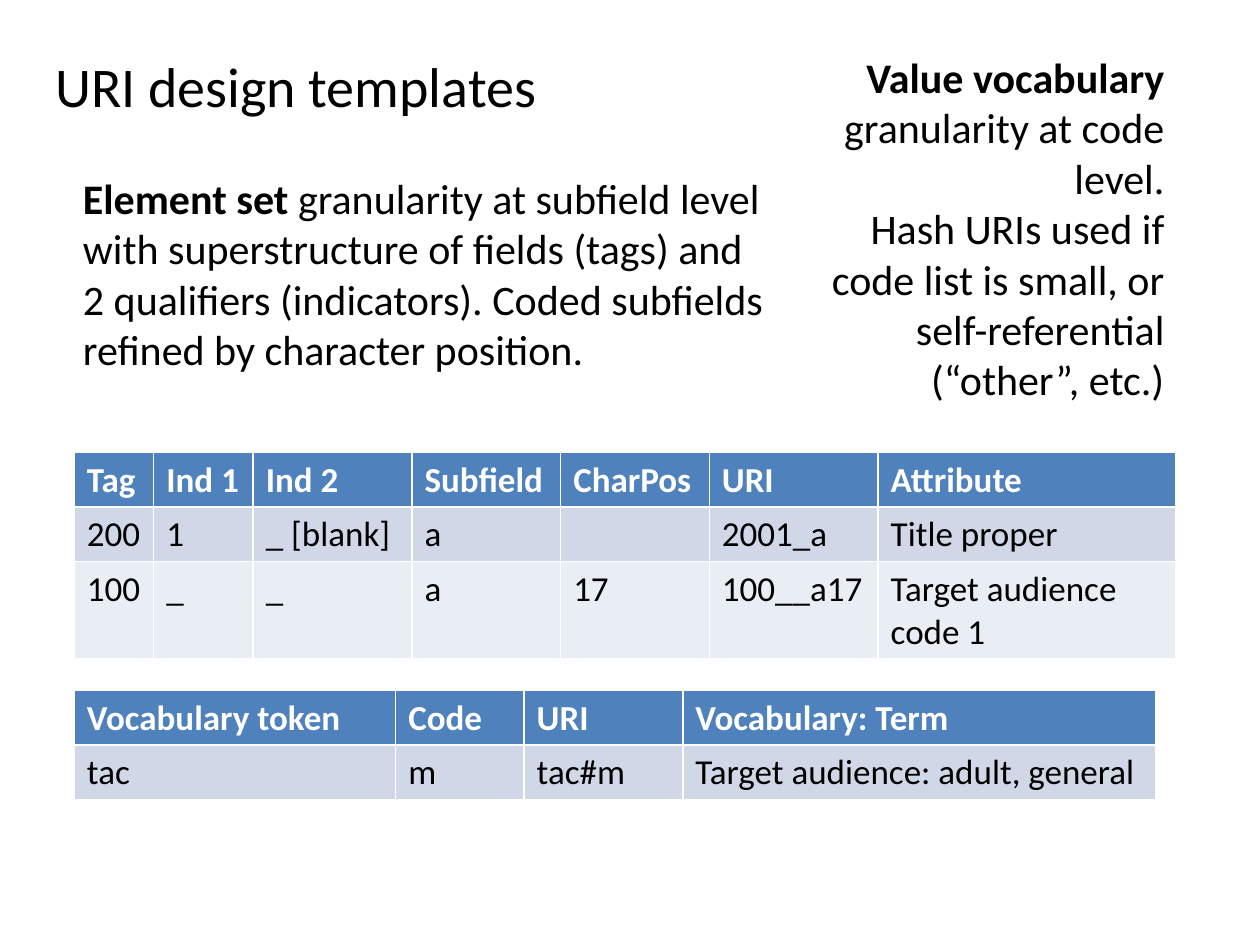
from pptx import Presentation
from pptx import util as u
from pptx.dml.color import RGBColor
from pptx.enum import text

COLORS = {"text": "000000", "header_text": "FFFFFF", "header": "4F81BD",
          "band_dark": "D0D8E8", "band_light": "E9EDF4"}
FONT = "Calibri"


def add_text(p, content, size=24, color="text", bold=False, align=text.PP_ALIGN.LEFT):
    p.alignment = align
    r = p.add_run()
    r.text = content
    r.font.name = FONT
    r.font.size = u.Pt(size)
    r.font.bold = bold
    r.font.color.rgb = RGBColor.from_string(COLORS[color])


prs = Presentation()
prs.slide_width, prs.slide_height = u.Inches(10), u.Inches(7.5)
s = prs.slides.add_slide(prs.slide_layouts[5])

title = s.shapes.title
title.left, title.top = u.Inches(0.34), u.Inches(0.36)
title.width, title.height = u.Inches(4.06), u.Inches(0.64)
tf = title.text_frame
tf.word_wrap = False
tf.auto_size = text.MSO_AUTO_SIZE.NONE
tf.vertical_anchor = text.MSO_ANCHOR.TOP
add_text(tf.paragraphs[0], "URI design templates", size=32)

notes = [
    ((0.56, 1.32, 5.62, 1.72), text.PP_ALIGN.LEFT, [
        [("Element set ", True),
         ("granularity at subfield level with superstructure of fields (tags) and "
          "2 qualifiers (indicators). Coded subfields refined by character position.", False)],
    ]),
    ((6.5, 0.36, 2.84, 2.93), text.PP_ALIGN.RIGHT, [
        [("Value vocabulary ", True), ("granularity at code level.", False)],
        [("Hash URIs used if code list is small, or self-referential (“other”, etc.)", False)],
    ]),
]
for box, align, paragraphs in notes:
    tf = s.shapes.add_textbox(*map(u.Inches, box)).text_frame
    tf.word_wrap = True
    for i, runs in enumerate(paragraphs):
        p = tf.add_paragraph() if i else tf.paragraphs[0]
        for content, bold in runs:
            add_text(p, content, bold=bold, align=align)

tables = [
    (3.59, [0.63, 0.79, 1.26, 1.18, 1.18, 1.34, 2.36], [
        ["Tag", "Ind 1", "Ind 2", "Subfield", "CharPos", "URI", "Attribute"],
        ["200", "1", "_ [blank]", "a", "", "2001_a", "Title proper"],
        ["100", "_", "_", "a", "17", "100__a17", "Target audience code 1"],
    ]),
    (5.48, [2.55, 1.02, 1.26, 3.75], [
        ["Vocabulary token", "Code", "URI", "Vocabulary: Term"],
        ["tac", "m", "tac#m", "Target audience: adult, general"],
    ]),
]
row_height = 0.41
row_fills = ["header", "band_dark", "band_light"]
for top, widths, rows in tables:
    table = s.shapes.add_table(len(rows), len(widths), u.Inches(0.59), u.Inches(top),
                               u.Inches(sum(widths)), u.Inches(row_height * len(rows))).table
    for column, width in zip(table.columns, widths):
        column.width = u.Inches(width)
    for i, values in enumerate(rows):
        for j, value in enumerate(values):
            cell = table.cell(i, j)
            cell.fill.solid()
            cell.fill.fore_color.rgb = RGBColor.from_string(COLORS[row_fills[i]])
            if value:
                add_text(cell.text_frame.paragraphs[0], value, size=20, bold=i == 0,
                         color="text" if i else "header_text")

prs.save("out.pptx")
